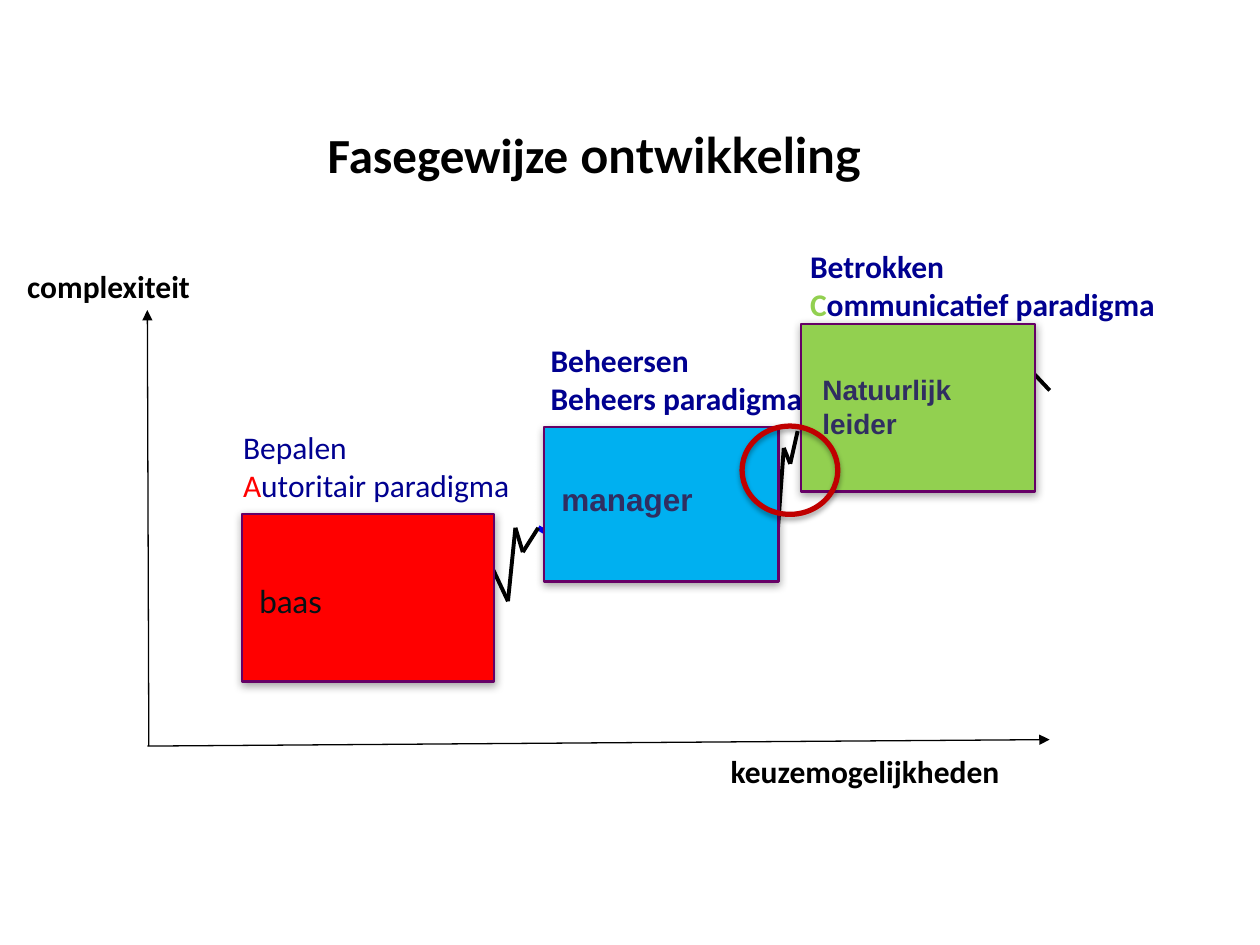
import pptx
import pptx.util
import pptx.dml.color
import pptx.enum.shapes
import pptx.enum.text
import pptx.oxml
from pptx.oxml.ns import nsdecls, qn

Cm, Pt, RGBColor = pptx.util.Cm, pptx.util.Pt, pptx.dml.color.RGBColor
SHAPES = pptx.enum.shapes.MSO_SHAPE
ANCHOR, ALIGN = pptx.enum.text.MSO_ANCHOR, pptx.enum.text.PP_ALIGN

BLACK = RGBColor(0x00, 0x00, 0x00)
RED = RGBColor(0xFF, 0x00, 0x00)
BLUE = RGBColor(0x00, 0x00, 0xFF)
SKY = RGBColor(0x00, 0xB0, 0xF0)
GREEN = RGBColor(0x92, 0xD0, 0x50)
PURPLE = RGBColor(0x66, 0x00, 0x66)
CRIMSON = RGBColor(0xC0, 0x00, 0x00)
NAVY = RGBColor(0x00, 0x00, 0x90)
INDIGO = RGBColor(0x30, 0x2E, 0x61)
INK = RGBColor(0x07, 0x12, 0x15)

# Text formats
AXIS = dict(name="Calibri", size=Pt(18), bold=True)
PHASE = dict(name="Calibri", size=Pt(18), bold=False, color=NAVY)
PHASE_BOLD = {**PHASE, "bold": True}
ROLE = dict(name="Arial", size=Pt(18), bold=True, color=INDIGO)
TITLE = dict(name="Calibri", size=Pt(28), bold=True)

# Content; positions are left, top, width, height in cm
title = [[("Fasegewijze", {}), (" ontwikkeling", {"name": "Lato"})]]
title_at = (2.95, 1.52, 18.06, 3.18)
axes = [((3, 15.04), (2.97, 6.25)), ((2.97, 15.04), (21.16, 14.91))]
axis_labels = [
    ("complexiteit", (0.3, 5.26, 4.2, 1.02)),
    ("keuzemogelijkheden", (14.48, 15.04, 6.12, 1.02)),
]
swing = [(10.85, 10.64), (11.38, 10.95), (11.84, 11), (12.32, 10.95), (12.88, 10.64)]
transitions = [
    [(9.93, 11.46), (10.24, 12.12), (10.39, 10.64), (10.54, 11.13), (10.85, 10.64)],
    [(15.67, 10.82), (15.8, 9.03), (15.93, 9.35), (16.08, 8.69)],
    [(20.85, 7.54), (21.16, 7.87)],
]
phases = [
    dict(fill=RED, box=(4.88, 10.36, 5.08, 3.38),
         label=[[("Bepalen", {})],
                [("A", {"color": RED}), ("utoritair paradigma", {})]],
         label_at=(4.65, 8.51, 6.07, 1.8), label_format=PHASE,
         role=["baas"], role_at=(4.98, 11.61, 3, 1.02),
         role_format=dict(name="Lato", size=Pt(18), color=INK)),
    dict(fill=SKY, box=(10.97, 8.61, 4.72, 3.12),
         label=[[("Beheersen", {})], [("Beheers paradigma", {})]],
         label_at=(10.85, 6.76, 5.74, 1.8), label_format=PHASE_BOLD,
         role=["manager"], role_at=(11.07, 9.55, 4.6, 1.02), role_format=ROLE),
    dict(fill=GREEN, box=(16.15, 6.53, 4.72, 3.38),
         label=[[("Betrokken", {})],
                [("C", {"color": GREEN}), ("ommunicatief paradigma", {})]],
         label_at=(16.08, 4.85, 7.87, 1.8), label_format=PHASE_BOLD,
         role=["Natuurlijk", "leider"], role_at=(16.33, 7.39, 4.55, 1.63),
         role_format={**ROLE, "size": Pt(16)}),
]
focus_at = (14.96, 8.59, 1.93, 1.78)

prs = pptx.Presentation()
prs.slide_width, prs.slide_height = Cm(25.4), Cm(19.05)
slide = prs.slides.add_slide(prs.slide_layouts[6])


def lengths(values):
    return [Cm(value) for value in values]


def add_text(paragraphs, at, base, align=ALIGN.LEFT, anchor=ANCHOR.TOP):
    frame = slide.shapes.add_textbox(*lengths(at)).text_frame
    frame.word_wrap = True
    frame.vertical_anchor = anchor
    for number, runs in enumerate(paragraphs):
        paragraph = frame.add_paragraph() if number else frame.paragraphs[0]
        paragraph.alignment = align
        for words, changes in runs:
            run = paragraph.add_run()
            run.text = words
            style = {"color": BLACK, **base, **changes}
            run.font.color.rgb = style.pop("color")
            for attribute, value in style.items():
                setattr(run.font, attribute, value)


def add_line(start, end, width, arrow=False):
    line = slide.shapes.add_connector(
        pptx.enum.shapes.MSO_CONNECTOR.STRAIGHT, *lengths(start + end))
    line.line.color.rgb = BLACK
    line.line.width = Pt(width)
    if arrow:
        line.line._get_or_add_ln().append(pptx.oxml.parse_xml(
            f'<a:tailEnd {nsdecls("a")} type="triangle"/>'))
    line._element.spPr.append(pptx.oxml.parse_xml(f'<a:effectLst {nsdecls("a")}/>'))


def add_shadowed(kind, at, fill, outline, width, blur):
    shape = slide.shapes.add_shape(kind, *lengths(at))
    shape.shadow.inherit = False
    if fill is None:
        shape.fill.background()
    else:
        shape.fill.solid()
        shape.fill.fore_color.rgb = fill
    shape.line.color.rgb = outline
    shape.line.width = Pt(width)
    shape._element.spPr.find(qn("a:effectLst")).append(pptx.oxml.parse_xml(
        f'<a:outerShdw {nsdecls("a")} blurRad="{Pt(blur)}" dist="{Pt(1.8)}" '
        'dir="5400000" rotWithShape="0"><a:srgbClr val="000000">'
        '<a:alpha val="35000"/></a:srgbClr></a:outerShdw>'))


# Axes
for start, end in axes:
    add_line(start, end, 0.75, arrow=True)
for words, at in axis_labels:
    add_text([[(words, {})]], at, AXIS)

# Swing behind the second phase, and the jagged transitions
first, *rest = [lengths(point) for point in swing]
builder = slide.shapes.build_freeform(*first)
builder.add_line_segments(rest, close=False)
curve = builder.convert_to_shape()
curve.shadow.inherit = False
curve.fill.background()
curve.line.color.rgb = BLUE
curve.line.width = Pt(3)
for points in transitions:
    for start, end in zip(points, points[1:]):
        add_line(start, end, 2.25)

# Phases
for phase in phases:
    add_shadowed(SHAPES.RECTANGLE, phase["box"], phase["fill"], PURPLE, 1.5, 5)
    add_text(phase["label"], phase["label_at"], phase["label_format"])

# Title, focus ring and roles
add_text(title, title_at, TITLE, ALIGN.CENTER, ANCHOR.MIDDLE)
add_shadowed(SHAPES.OVAL, focus_at, None, CRIMSON, 3, 3.1)
for phase in phases:
    add_text([[(words, {})] for words in phase["role"]],
             phase["role_at"], phase["role_format"])

prs.save("out.pptx")
